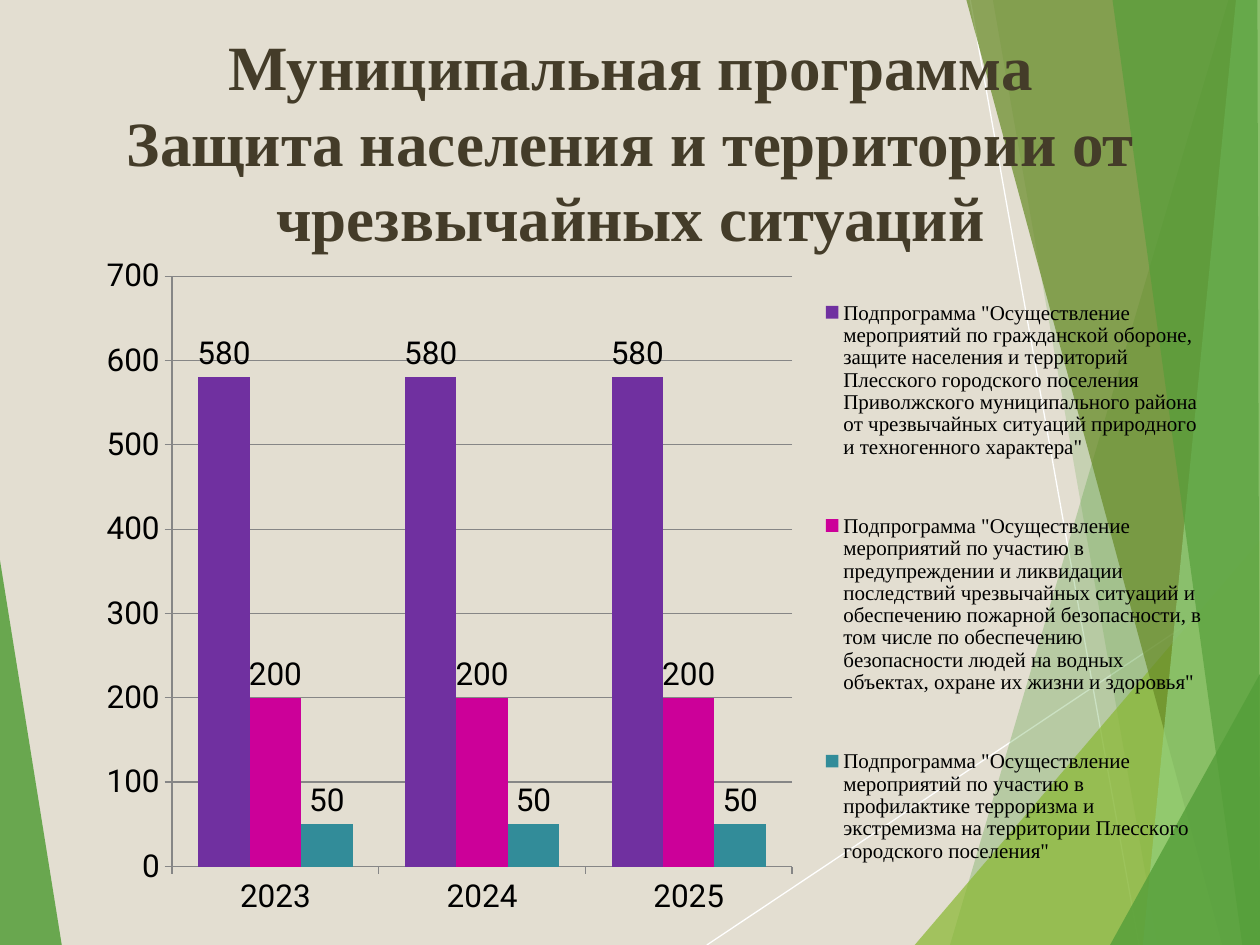
from dataclasses import dataclass

from lxml.etree import SubElement
from pptx import Presentation
from pptx.chart.data import CategoryChartData
from pptx.dml.color import RGBColor
from pptx.enum.chart import XL_CHART_TYPE as ChartType
from pptx.enum.chart import XL_LABEL_POSITION as LabelPosition
from pptx.enum.chart import XL_LEGEND_POSITION as LegendPosition
from pptx.enum.chart import XL_TICK_MARK as TickMark
from pptx.enum.shapes import MSO_CONNECTOR as Connector
from pptx.enum.text import MSO_ANCHOR as Anchor
from pptx.enum.text import PP_ALIGN as Align
from pptx.oxml import parse_xml
from pptx.oxml.ns import qn
from pptx.util import Inches, Pt

WIDTH, HEIGHT = Inches(10), Inches(7.5)
GREEN = "549E39"
AXIS_GREY = "868686"
SERIF = "Times New Roman"
CHART_NS = "http://schemas.openxmlformats.org/drawingml/2006/chart"

Point = tuple[float, float]


@dataclass(frozen=True)
class Facet:
    corners: tuple[Point, ...]
    color: str
    opacity: int


@dataclass(frozen=True)
class Ray:
    start: Point
    end: Point


@dataclass(frozen=True)
class Subprogram:
    name: str
    amounts: tuple[int, ...]
    color: str


@dataclass(frozen=True)
class Area:
    x: float
    y: float
    w: float
    h: float


RAYS = (Ray((56.1, 100), (100, 60.9)), Ray((77, 0), (90.4, 100)))

FACETS = (
    Facet(((0, 59.3), (4.9, 100), (0, 100)), GREEN, 85),
    Facet(((97.5, 0), (75.4, 100), (100, 100), (100, 0)), GREEN, 30),
    Facet(((78.8, 0), (91.9, 100), (100, 100), (100, 0)), GREEN, 20),
    Facet(((72.6, 100), (100, 57.2), (100, 100)), "8AB833", 72),
    Facet(((76.7, 0), (97, 100), (100, 100), (100, 0)), "678A26", 70),
    Facet(((98.1, 0), (90.7, 100), (100, 100), (100, 0)), "93D07D", 70),
    Facet(((88.3, 0), (98.6, 100), (100, 100), (99.8, 0)), GREEN, 65),
    Facet(((88.1, 100), (100, 71.3), (100, 100)), GREEN, 80),
)

TITLE_LINES = (
    "Муниципальная программа",
    "Защита населения и территории от чрезвычайных ситуаций",
)
YEARS = ("2023", "2024", "2025")
SUBPROGRAMS = (
    Subprogram(
        'Подпрограмма "Осуществление мероприятий по гражданской обороне, '
        "защите населения и территорий Плесского городского поселения "
        "Приволжского муниципального района от чрезвычайных ситуаций "
        'природного и техногенного характера"',
        (580, 580, 580), "7030A0",
    ),
    Subprogram(
        'Подпрограмма "Осуществление мероприятий по участию в предупреждении '
        "и ликвидации последствий чрезвычайных ситуаций и обеспечению "
        "пожарной безопасности, в том числе по обеспечению безопасности "
        'людей на водных объектах, охране их жизни и здоровья"',
        (200, 200, 200), "CC0099",
    ),
    Subprogram(
        'Подпрограмма "Осуществление мероприятий по участию в профилактике '
        "терроризма и экстремизма на территории Плесского городского "
        'поселения"',
        (50, 50, 50), "328C99",
    ),
)

TITLE_AREA = Area(2, 1.7, 96.1, 26.4)
CHART_AREA = Area(6.7, 25.9, 89.8, 72.4)
PLOT_SHARE = Area(7.75, 4.6, 54.8, 86.3)
LEGEND_SHARE = Area(66, 0, 33.5, 98.6)


def rgb(color: str) -> RGBColor:
    return RGBColor.from_string(color)


def across(percent: float) -> int:
    return round(WIDTH * percent / 100)


def down(percent: float) -> int:
    return round(HEIGHT * percent / 100)


def place(area: Area) -> tuple[int, int, int, int]:
    return across(area.x), down(area.y), across(area.w), down(area.h)


def draw_ray(slide, ray: Ray) -> None:
    (x1, y1), (x2, y2) = ray.start, ray.end
    line = slide.shapes.add_connector(
        Connector.STRAIGHT, across(x1), down(y1), across(x2), down(y2))
    line.line.color.rgb = rgb("FFFFFF")
    line.line.width = Pt(0.75)
    SubElement(line._element.spPr, qn("a:effectLst"))


def draw_facet(slide, facet: Facet) -> None:
    first, *rest = [(across(x), down(y)) for x, y in facet.corners]
    builder = slide.shapes.build_freeform(*first)
    builder.add_line_segments(rest, close=True)
    shape = builder.convert_to_shape()
    shape.shadow.inherit = False
    shape.line.fill.background()
    shape.fill.solid()
    shape.fill.fore_color.rgb = rgb(facet.color)
    fill_color = shape._element.spPr.find(f"{qn('a:solidFill')}/{qn('a:srgbClr')}")
    SubElement(fill_color, qn("a:alpha"), val=str(facet.opacity * 1000))


def draw_title(slide) -> None:
    frame = slide.shapes.add_textbox(*place(TITLE_AREA)).text_frame
    frame.word_wrap = True
    frame.vertical_anchor = Anchor.MIDDLE
    heading = frame.paragraphs[0]
    heading.alignment = Align.CENTER
    for index, words in enumerate(TITLE_LINES):
        if index:
            heading.add_line_break()
        run = heading.add_run()
        run.text = words
        run.font.size = Pt(36)
        run.font.bold = True
        run.font.name = SERIF
        run.font.color.rgb = rgb("443C29")


def set_layout(part, area: Area, inner: bool = False) -> None:
    for old in part.findall(qn("c:layout")):
        part.remove(old)
    target = '<c:layoutTarget val="inner"/>' if inner else ""
    sides = "".join(
        f'<c:{side} val="{value / 100:.4f}"/>'
        for side, value in zip("xywh", (area.x, area.y, area.w, area.h)))
    layout = parse_xml(
        f'<c:layout xmlns:c="{CHART_NS}"><c:manualLayout>{target}'
        f'<c:xMode val="edge"/><c:yMode val="edge"/>{sides}'
        "</c:manualLayout></c:layout>")
    part.insert(0 if inner else 1, layout)


def draw_chart(slide) -> None:
    data = CategoryChartData()
    data.categories = YEARS
    for subprogram in SUBPROGRAMS:
        data.add_series(subprogram.name, subprogram.amounts)
    chart = slide.shapes.add_chart(
        ChartType.COLUMN_CLUSTERED, *place(CHART_AREA), data).chart
    chart.has_title = False
    chart.font.size = Pt(18)
    chart.font.name = "Roboto"
    chart.font.color.rgb = rgb("000000")

    amounts = chart.value_axis
    amounts.minimum_scale, amounts.maximum_scale = 0, 700
    amounts.major_unit = 100
    amounts.major_gridlines.format.line.color.rgb = rgb(AXIS_GREY)
    for axis in (chart.category_axis, amounts):
        axis.major_tick_mark = TickMark.OUTSIDE
        axis.format.line.color.rgb = rgb(AXIS_GREY)

    plot = chart.plots[0]
    plot.gap_width, plot.overlap = 102, 0
    plot.vary_by_categories = False
    for series, subprogram in zip(plot.series, SUBPROGRAMS):
        series.format.fill.solid()
        series.format.fill.fore_color.rgb = rgb(subprogram.color)
        series.data_labels.show_value = True
        series.data_labels.position = LabelPosition.OUTSIDE_END

    chart.has_legend = True
    legend = chart.legend
    legend.position = LegendPosition.RIGHT
    legend.include_in_layout = False
    legend.font.size = Pt(12)
    legend.font.name = SERIF
    legend.font.color.rgb = rgb("000000")
    set_layout(legend._element, LEGEND_SHARE)
    set_layout(chart._chartSpace.chart.plotArea, PLOT_SHARE, inner=True)


def main() -> None:
    deck = Presentation()
    deck.slide_width, deck.slide_height = WIDTH, HEIGHT
    slide = deck.slides.add_slide(deck.slide_layouts[6])
    slide.background.fill.solid()
    slide.background.fill.fore_color.rgb = rgb("E3DED1")
    for ray in RAYS:
        draw_ray(slide, ray)
    for facet in FACETS:
        draw_facet(slide, facet)
    draw_title(slide)
    draw_chart(slide)
    deck.save("out.pptx")


if __name__ == "__main__":
    main()
